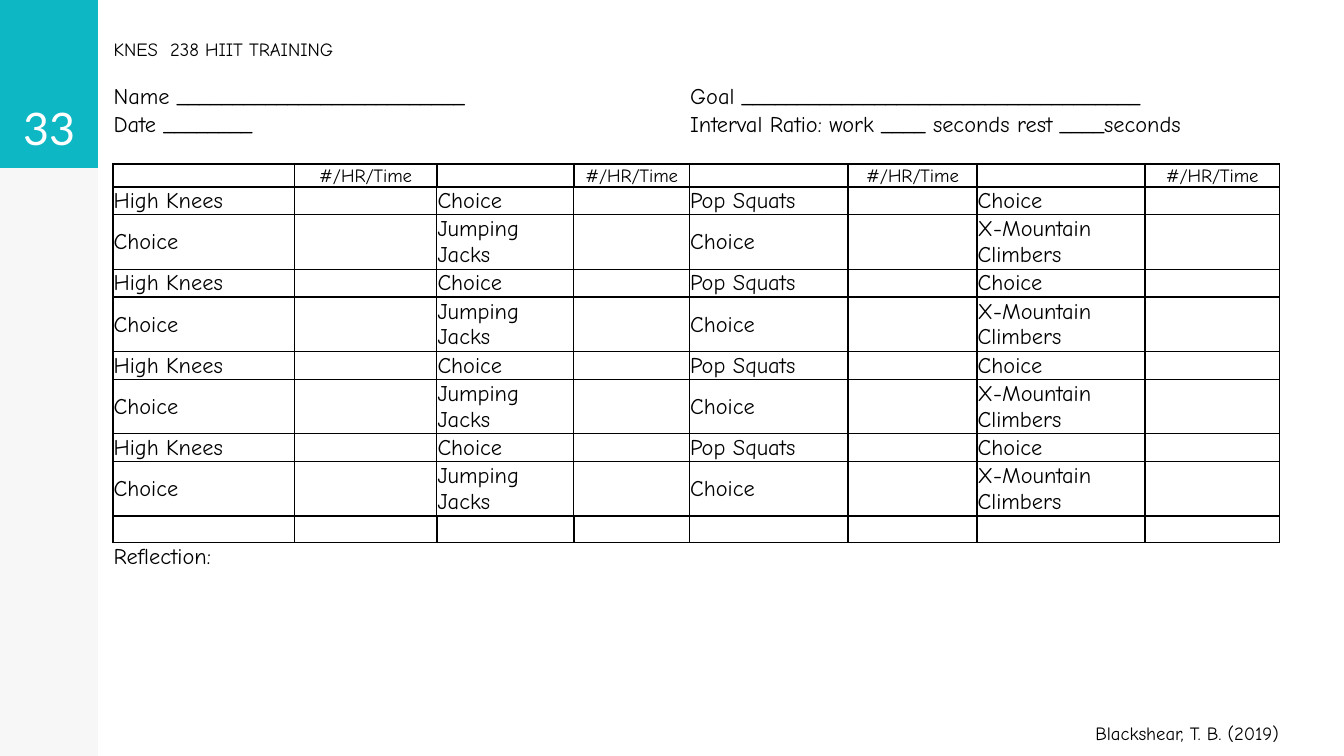
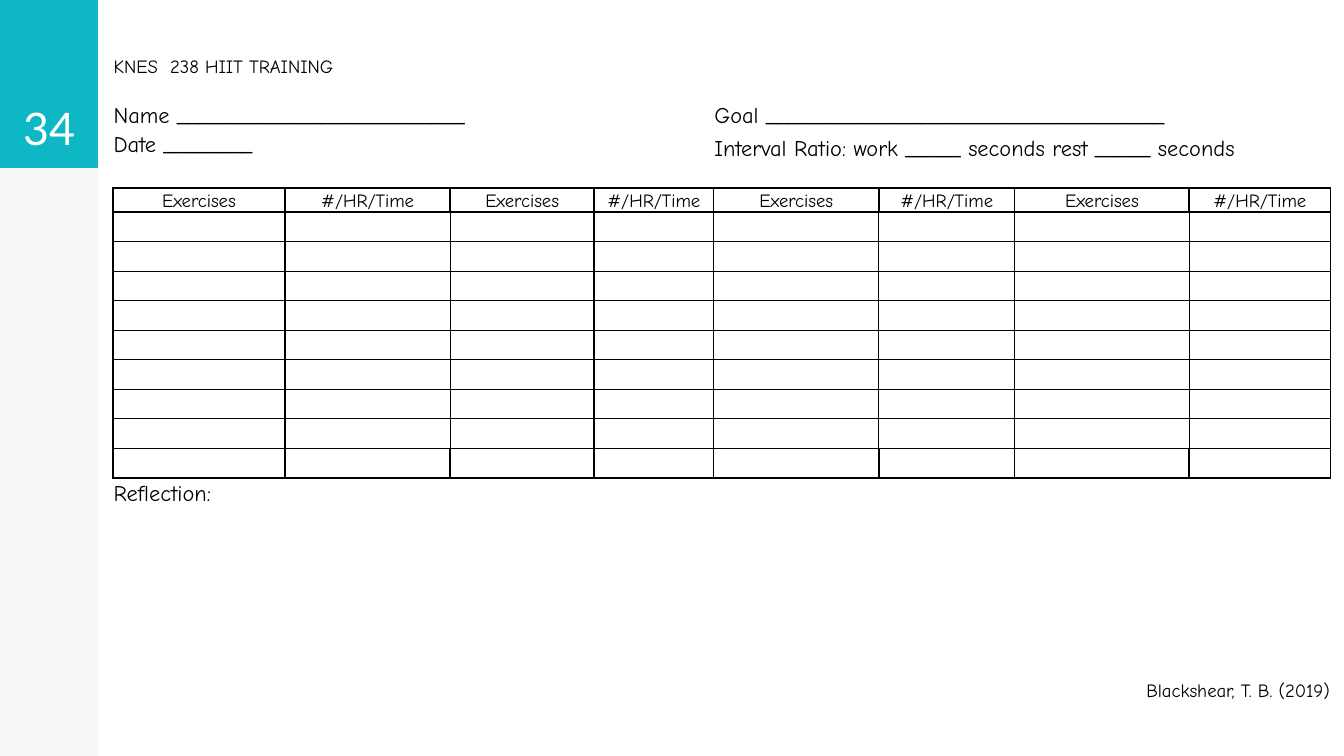
from lxml.etree import SubElement
from pptx import Presentation
from pptx.dml.color import RGBColor
from pptx.enum.shapes import MSO_SHAPE as Shape
from pptx.enum.text import MSO_ANCHOR as Anchor, PP_ALIGN as Align
from pptx.oxml.ns import qn
from pptx.util import Inches, Pt

WIDTH = 10
HEIGHT = WIDTH * 9 / 16
BAND_WIDTH, BADGE_HEIGHT = 0.73, 1.25
TABLE_LEFT = 0.84
LINE_HEIGHT = 14.1 / 72
TEAL, BLACK, WHITE = "0DB7C4", "000000", "FFFFFF"
BODY_FONT, NUMBER_FONT = "Comic Neue", "Lato"
NO_GRID_STYLE = "{2D5ABB26-0587-4C30-8999-92F81FD0307C}"

HEADER_ROW, FIRST_LOG_ROW, LAST_LOG_ROW, TOTAL_ROW, REFLECTION_ROW, CREDIT_ROW = 4, 5, 12, 13, 14, 18
EXERCISE_COLUMNS, RESULT_COLUMNS = (0, 2, 5, 8), (1, 4, 6, 9)
USUAL_SPANS = [(2, 3), (6, 7), (9, 10)]
SPANS = {
    0: [(0, 2), (5, 6), (8, 9)],
    1: [(0, 3), (5, 10)],
    2: [(2, 3), (5, 10)],
    CREDIT_ROW: [(2, 3), (6, 7), (8, 10)],
}
CIRCUIT = [
    ("High Knees", "Choice", "Pop Squats", "Choice"),
    ("Choice", "Jumping Jacks", "Choice", "X-Mountain Climbers"),
]


def color(value):
    """Turn a hex string into a colour."""
    return RGBColor.from_string(value)


def format_paragraph(paragraph, text, size, font=BODY_FONT, ink=BLACK, align=Align.LEFT):
    """Write text into a paragraph and style it."""
    paragraph.text = text
    paragraph.alignment = align
    paragraph.font.size = Pt(size)
    paragraph.font.name = font
    paragraph.font.color.rgb = color(ink)


def add_band(slide, height, fill, opacity=100):
    """Add a rectangle at the left edge of the slide."""
    band = slide.shapes.add_shape(Shape.RECTANGLE, 0, 0, Inches(BAND_WIDTH), Inches(height))
    band.shadow.inherit = False
    band.line.fill.background()
    band.fill.solid()
    band.fill.fore_color.rgb = color(fill)
    if opacity < 100:
        tone = band.fill._xPr.find(".//" + qn("a:srgbClr"))
        SubElement(tone, qn("a:alpha"), val=str(opacity * 1000))


def add_page_number(slide, number):
    """Add the page number at the foot of the teal badge."""
    box = slide.shapes.add_textbox(0, 0, Inches(BAND_WIDTH), Inches(BADGE_HEIGHT))
    frame = box.text_frame
    frame.word_wrap = True
    frame.vertical_anchor = Anchor.BOTTOM
    frame.margin_left = frame.margin_right = Inches(0.1)
    frame.margin_top = frame.margin_bottom = Inches(0.1)
    format_paragraph(frame.paragraphs[0], str(number), 24, NUMBER_FONT, WHITE, Align.CENTER)


def border_weights(row):
    """Give the left, right, top and bottom line widths of the cells in a row."""
    if row in (HEADER_ROW, TOTAL_ROW):
        return 1, 1, 1, 1
    if FIRST_LOG_ROW <= row <= LAST_LOG_ROW:
        top = 1 if row == FIRST_LOG_ROW else 0.75
        bottom = 1 if row == LAST_LOG_ROW else 0.75
        return 0.75, 0.75, top, bottom
    return 0, 0, int(row == REFLECTION_ROW), int(row == HEADER_ROW - 1)


def set_borders(cell, weights):
    """Draw the four borders of a cell, leaving out those of zero width."""
    properties = cell._tc.get_or_add_tcPr()
    for side, weight in zip(("lnL", "lnR", "lnT", "lnB"), weights):
        line = SubElement(properties, qn("a:" + side), w=str(Pt(weight)))
        if weight:
            fill = SubElement(line, qn("a:solidFill"))
            SubElement(fill, qn("a:srgbClr"), val=BLACK)
        else:
            SubElement(line, qn("a:noFill"))


def format_cell(cell, row, entry):
    """Set the borders, margins and text of one cell."""
    set_borders(cell, border_weights(row))
    cell.fill.background()
    cell.margin_left = cell.margin_right = cell.margin_top = Pt(0.4)
    cell.margin_bottom = 0
    is_log = FIRST_LOG_ROW <= row <= LAST_LOG_ROW
    cell.vertical_anchor = Anchor.MIDDLE if is_log else Anchor.BOTTOM
    paragraph = cell.text_frame.paragraphs[0]
    if entry:
        text, size, align = entry
        format_paragraph(paragraph, text, size, align=align)
    else:
        SubElement(paragraph._p, qn("a:endParaRPr"), sz="800")


def worksheet_entries(ratio, headings, circuit):
    """Map each filled cell to its text, size and alignment."""
    entries = {
        (0, 0): ("KNES  238 HIIT TRAINING", 10, Align.LEFT),
        (1, 0): ("Name " + "_" * 26, 12, Align.LEFT),
        (1, 5): ("Goal " + "_" * 36, 12, Align.LEFT),
        (2, 0): ("Date " + "_" * 8, 12, Align.LEFT),
        (2, 5): (ratio, 12, Align.LEFT),
        (REFLECTION_ROW, 0): ("Reflection:", 12, Align.LEFT),
        (CREDIT_ROW, 8): ("Blackshear, T. B. (2019)", 10, Align.RIGHT),
    }
    for column in RESULT_COLUMNS:
        entries[HEADER_ROW, column] = ("#/HR/Time", 10, Align.CENTER)
    if headings:
        for column in EXERCISE_COLUMNS:
            entries[HEADER_ROW, column] = (headings, 10, Align.CENTER)
    if circuit:
        for row in range(FIRST_LOG_ROW, LAST_LOG_ROW + 1):
            exercises = circuit[(row - FIRST_LOG_ROW) % len(circuit)]
            for column, exercise in zip(EXERCISE_COLUMNS, exercises):
                entries[row, column] = (exercise, 12, Align.LEFT)
    return entries


def add_worksheet(slide, top, widths, heights, entries):
    """Add the training table and return it."""
    frame = slide.shapes.add_table(
        len(heights), len(widths), Inches(TABLE_LEFT), Inches(top),
        Inches(sum(widths)), Inches(sum(heights)))
    table = frame.table
    table.first_row = table.horz_banding = False
    table._tbl.tblPr.find(qn("a:tableStyleId")).text = NO_GRID_STYLE
    for column, width in zip(table.columns, widths):
        column.width = Inches(width)
    for row, height in enumerate(heights):
        table.rows[row].height = Inches(height)
        for column in range(len(widths)):
            format_cell(table.cell(row, column), row, entries.get((row, column)))
    table.cell(0, 0).margin_bottom = Inches(0.16)
    return table


def merge_rows(table, tall_ratio):
    """Merge the cells of each row, with the ratio two rows tall if asked."""
    for row in range(len(table.rows)):
        for first, last in SPANS.get(row, USUAL_SPANS):
            if tall_ratio and row == 3 and first > 5:
                continue
            bottom = row + 1 if tall_ratio and (row, first) == (2, 5) else row
            table.cell(row, first).merge(table.cell(bottom, last))
    if tall_ratio:
        table.cell(2, 5).margin_bottom = Inches(0.19)


def add_training_slide(presentation, number, top, widths, heights, ratio,
                       headings=None, circuit=None, tall_ratio=False):
    """Add one training worksheet slide."""
    slide = presentation.slides.add_slide(presentation.slide_layouts[6])
    add_band(slide, HEIGHT, BLACK, opacity=3)
    add_band(slide, BADGE_HEIGHT, TEAL)
    add_page_number(slide, number)
    entries = worksheet_entries(ratio, headings, circuit)
    table = add_worksheet(slide, top, widths, heights, entries)
    merge_rows(table, tall_ratio)


def main():
    """Build and save the presentation."""
    presentation = Presentation()
    presentation.slide_width, presentation.slide_height = Inches(WIDTH), Inches(HEIGHT)
    add_training_slide(
        presentation, 33, 0.28,
        [1.35, 1.06, 0.24, 0.78, 0.86, 1.18, 0.18, 0.78, 1.25, 0.22, 0.78],
        [0.33] + [LINE_HEIGHT] * 3 + [0.16] + [LINE_HEIGHT, 2 * LINE_HEIGHT] * 4
        + [LINE_HEIGHT] * 4 + [0.68, 0.23],
        "Interval Ratio: work ____ seconds rest ____seconds", circuit=CIRCUIT)
    add_training_slide(
        presentation, 34, 0.38,
        [1.28, 1.23, 0.25, 0.82, 0.89, 1.23, 0.19, 0.82, 1.3, 0.23, 0.82],
        [0.36] + [0.22] * 3 + [0.18] + [0.22] * 12 + [0.75, 0.26],
        "Interval Ratio: work _____ seconds rest _____ seconds",
        headings="Exercises", tall_ratio=True)
    presentation.save("out.pptx")


if __name__ == "__main__":
    main()
